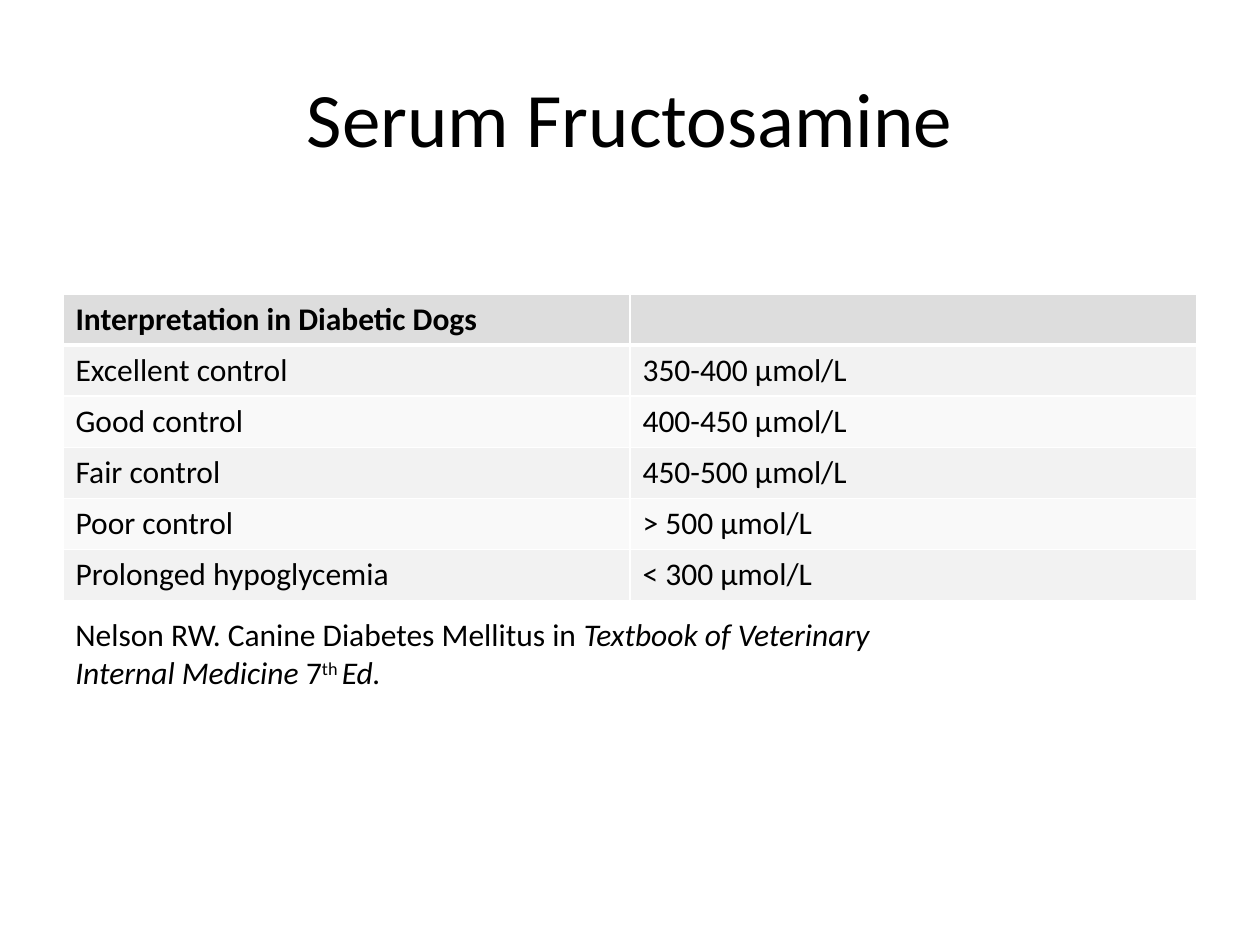
from lxml import etree
from pptx import Presentation
from pptx.dml.color import RGBColor
from pptx.enum.text import MSO_ANCHOR, PP_ALIGN
from pptx.oxml.ns import qn
from pptx.util import Pt

CENTER = PP_ALIGN.CENTER
MIDDLE = MSO_ANCHOR.MIDDLE
TITLE_ONLY = 5
PX_PER_INCH = 126
FONT = "Calibri"
BLACK, WHITE = "000000", "FFFFFF"
HEADER_FILL = "DDDDDD"
BAND_FILLS = ("F2F2F2", "F9F9F9")

ROWS = [
    ("Interpretation in Diabetic Dogs", ""),
    ("Excellent control", "350-400 µmol/L"),
    ("Good control", "400-450 µmol/L"),
    ("Fair control", "450-500 µmol/L"),
    ("Poor control", "> 500 µmol/L"),
    ("Prolonged hypoglycemia", "< 300 µmol/L"),
]
CITATION = [
    ("Nelson RW. Canine Diabetes Mellitus in ", {}),
    ("Textbook of Veterinary Internal Medicine", {"italic": True}),
    (" 7", {}),
    ("th ", {"baseline": 30}),
    ("Ed.", {"italic": True}),
]


def px(n):
    return round(n * 914400 / PX_PER_INCH)


def color(value):
    return RGBColor.from_string(value)


class Deck:
    """Holds the text style and the current slide."""

    def __init__(self, width, height):
        self.prs = Presentation()
        self.prs.slide_width, self.prs.slide_height = px(width), px(height)
        self.s = self.prs.slides.add_slide(self.prs.slide_layouts[TITLE_ONLY])

    def run(self, p, text, size=18, bold=False, italic=False, baseline=0):
        """Add a styled run; baseline is the raise in percent."""
        r = p.add_run()
        r.text = text
        r.font.name, r.font.size = FONT, Pt(size)
        r.font.bold, r.font.italic = bold, italic
        r.font.color.rgb = color(BLACK)
        if baseline:
            r._r.get_or_add_rPr().set("baseline", str(baseline * 1000))

    def title(self, text, x, y, w, h):
        sp = self.s.shapes.title
        sp.left, sp.top, sp.width, sp.height = map(px, (x, y, w, h))
        tf = sp.text_frame
        tf.vertical_anchor = MIDDLE
        p = tf.paragraphs[0]
        p.alignment = CENTER
        self.run(p, text, size=44)

    def border(self, cell, side, width):
        tcPr = cell._tc.get_or_add_tcPr()
        ln = etree.SubElement(tcPr, qn(f"a:ln{side}"), w=str(Pt(width)))
        fill = etree.SubElement(ln, qn("a:solidFill"))
        etree.SubElement(fill, qn("a:srgbClr"), val=WHITE)

    def table(self, rows, x, y, w, row_height):
        """Draw a table with a header row and alternating bands below it."""
        shape = self.s.shapes.add_table(
            len(rows), len(rows[0]), px(x), px(y), px(w), px(row_height * len(rows)))
        for i, values in enumerate(rows):
            header = i == 0
            widths = {"L": 1, "R": 1, "T": 3 if i == 1 else 1, "B": 3 if header else 1}
            for j, text in enumerate(values):
                cell = shape.table.cell(i, j)
                for side, width in widths.items():
                    self.border(cell, side, width)
                cell.fill.solid()
                cell.fill.fore_color.rgb = color(
                    HEADER_FILL if header else BAND_FILLS[(i - 1) % 2])
                if text:
                    self.run(cell.text_frame.paragraphs[0], text, bold=header)

    def text(self, runs, x, y, w, h):
        tf = self.s.shapes.add_textbox(px(x), px(y), px(w), px(h)).text_frame
        tf.word_wrap = True
        for text, style in runs:
            self.run(tf.paragraphs[0], text, **style)


def main():
    deck = Deck(1260, 945)
    deck.title("Serum Fructosamine", 63, 38, 1134, 158)
    deck.table(ROWS, 63, 294, 1134, 51)
    deck.text(CITATION, 63, 609, 872, 89)
    deck.prs.save("out.pptx")


if __name__ == "__main__":
    main()
